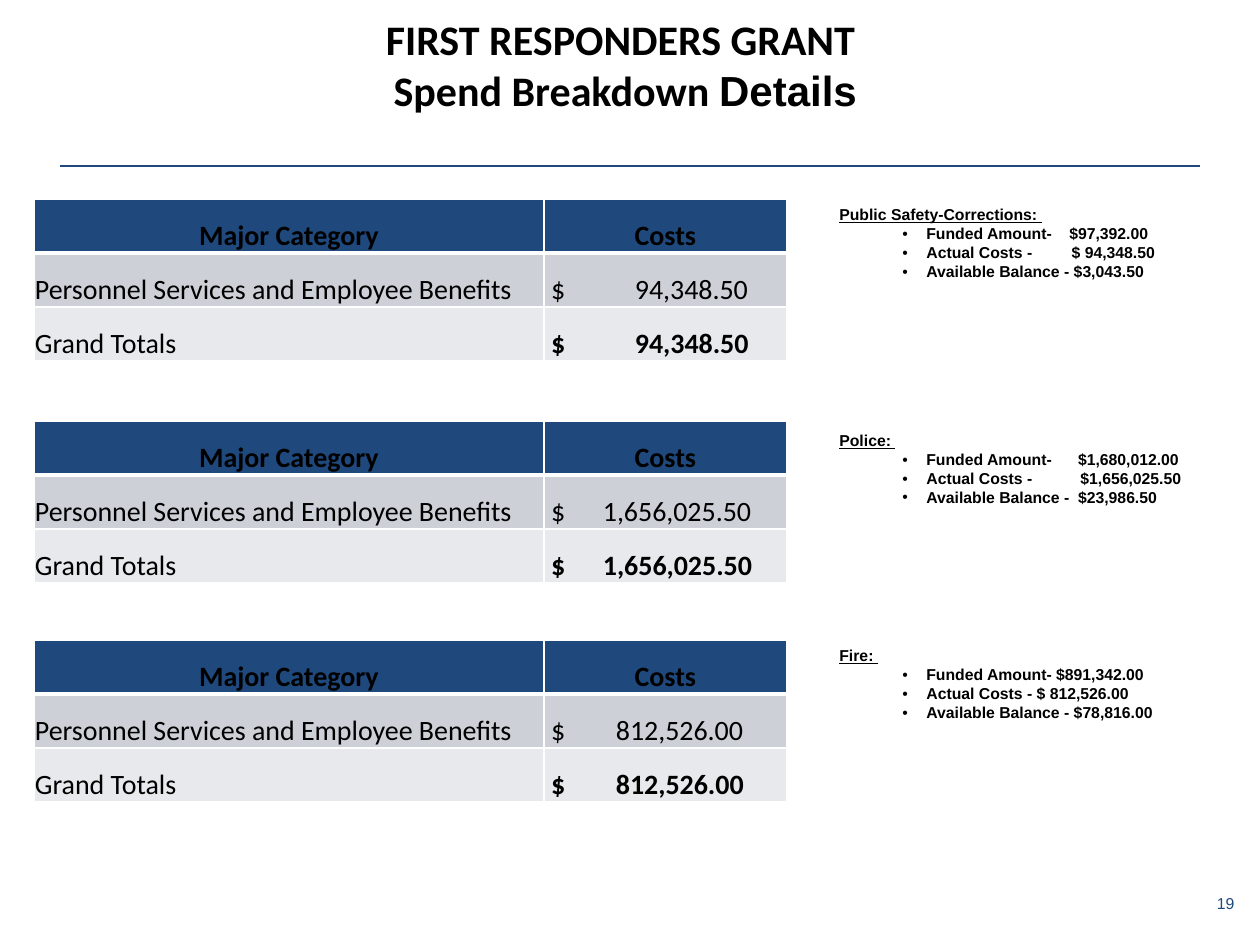
from dataclasses import dataclass
from lxml import etree
from pptx import Presentation
from pptx import util as u
from pptx.dml.color import RGBColor
from pptx.enum import shapes, text
from pptx.oxml.ns import qn


@dataclass(frozen=True)
class Theme:
    navy: str = "1F497D"
    black: str = "000000"
    white: str = "FFFFFF"
    band: str = "CDD0D7"
    pale: str = "E8E9EC"
    head: str = "Calibri"
    body: str = "Arial"
    title: int = 24
    cell: int = 16
    note: int = 9


T = Theme()
# Table top, note top and height, costs, tab stop of costs, note heading,
# then (label, amount, width of the gap in spaces)
GROUPS = [
    (199, 199, 130, "94,348.50", 90, "Public Safety-Corrections: ",
     [("Funded Amount-", "$97,392.00", 4),
      ("Actual Costs -", "$ 94,348.50", 9),
      ("Available Balance -", "$3,043.50", 1)]),
    (421, 425, 130, "1,656,025.50", 58, "Police: ",
     [("Funded Amount-", "$1,680,012.00", 6),
      ("Actual Costs -", "$1,656,025.50", 11),
      ("Available Balance -", "$23,986.50", 2)]),
    (640, 640, 168, "812,526.00", 71, "Fire: ",
     [("Funded Amount-", "$891,342.00", 1),
      ("Actual Costs -", "$ 812,526.00", 1),
      ("Available Balance -", "$78,816.00", 1)]),
]


def px(n):
    return u.Emu(n * 914400 // 126)


def style(font, size, face, color=T.black, bold=False, line=False):
    font.size, font.name = u.Pt(size), face
    font.bold, font.underline = bold, line
    font.color.rgb = RGBColor.from_string(color)


def add_box(slide, x, y, w, h):
    frame = slide.shapes.add_textbox(px(x), px(y), px(w), px(h)).text_frame
    frame.word_wrap = True
    return frame


def add_title(slide):
    frame = add_box(slide, 34, 14, 1167, 141)
    frame.margin_left, frame.margin_right = px(19), px(13)
    frame.margin_top = 0
    para = frame.paragraphs[0]
    para.alignment = text.PP_ALIGN.CENTER
    para.add_run().text = "FIRST RESPONDERS GRANT"
    para.add_line_break()
    para.add_run().text = " Spend Breakdown "
    last = para.add_run()
    last.text = "Details"
    style(para.font, T.title, T.head, bold=True)
    last.font.name = T.body


def add_rule(slide):
    rule = slide.shapes.add_connector(
        shapes.MSO_CONNECTOR.STRAIGHT, px(60), px(166), px(1200), px(166))
    rule.line.color.rgb = RGBColor.from_string(T.navy)
    rule.line.width = u.Pt(1.5)
    etree.SubElement(rule._element.spPr, qn("a:effectLst"))


def add_page(slide):
    frame = add_box(slide, 1206, 888, 42, 30)
    # Side margins leave room for both digits on one line
    frame.margin_left, frame.margin_right = px(11), 0
    para = frame.paragraphs[0]
    para.text = "19"
    style(para.font, T.note, T.body, T.navy)


def set_edges(cell, top, base):
    props = cell._tc.get_or_add_tcPr()
    sides = [("L", 1), ("R", 1), ("T", top), ("B", base)]
    for spot, (side, width) in enumerate(sides):
        edge = etree.Element(qn("a:ln" + side), w=str(u.Pt(width)))
        fill = etree.SubElement(edge, qn("a:solidFill"))
        etree.SubElement(fill, qn("a:srgbClr"), val=T.white)
        props.insert(spot, edge)


def set_tab(para, stop):
    tabs = etree.SubElement(para._p.get_or_add_pPr(), qn("a:tabLst"))
    etree.SubElement(tabs, qn("a:tab"), pos=str(px(stop)), algn="l")


def add_costs(slide, top, cost, stop):
    grid = slide.shapes.add_table(3, 2, px(34), px(top), px(753), px(162)).table
    for col, width in zip(grid.columns, (510, 243)):
        col.width = px(width)
    money = f" $\t{cost}"
    rows = [("Major Category", " Costs "),
            ("Personnel Services and Employee Benefits", money),
            ("Grand Totals", money)]
    fills = (T.navy, T.band, T.pale)
    edges = ((1, 3), (3, 1), (1, 1))
    for r, row in enumerate(rows):
        for c, words in enumerate(row):
            cell = grid.cell(r, c)
            cell.fill.solid()
            cell.fill.fore_color.rgb = RGBColor.from_string(fills[r])
            set_edges(cell, *edges[r])
            cell.margin_left = cell.margin_right = cell.margin_top = px(1)
            cell.margin_bottom = 0
            cell.vertical_anchor = text.MSO_ANCHOR.BOTTOM
            para = cell.text_frame.paragraphs[0]
            para.text = words
            if r == 0:
                para.alignment = text.PP_ALIGN.CENTER
            elif c == 1:
                set_tab(para, stop)
            style(para.font, T.cell, T.head, bold=r == 0 or (r, c) == (2, 1))


def set_bullet(para):
    props = para._p.get_or_add_pPr()
    props.set("marL", str(px(87)))
    props.set("indent", str(-px(24)))
    etree.SubElement(props, qn("a:buFont"), typeface=T.body)
    etree.SubElement(props, qn("a:buChar"), char="•")


def add_note(slide, top, high, name, items):
    frame = add_box(slide, 827, top, 399, high)
    para = frame.paragraphs[0]
    para.text = name
    style(para.font, T.note, T.body, bold=True, line=True)
    for label, amount, gap in items:
        para = frame.add_paragraph()
        para.level = 1
        set_bullet(para)
        style(para.font, T.note, T.body, bold=True)
        para.add_run().text = label
        # One space, letter-spaced to the wanted width
        space = para.add_run()
        space.text = " "
        space.font._element.set("spc", str((gap - 1) * 250))
        para.add_run().text = amount


def main():
    deck = Presentation()
    deck.slide_width, deck.slide_height = px(1260), px(945)
    slide = deck.slides.add_slide(deck.slide_layouts[6])
    # Heading and page furniture
    add_rule(slide)
    add_page(slide)
    add_title(slide)
    # One table and one note for each department
    for top, at, high, cost, stop, name, items in GROUPS:
        add_costs(slide, top, cost, stop)
        add_note(slide, at, high, name, items)
    deck.save("out.pptx")


if __name__ == "__main__":
    main()
